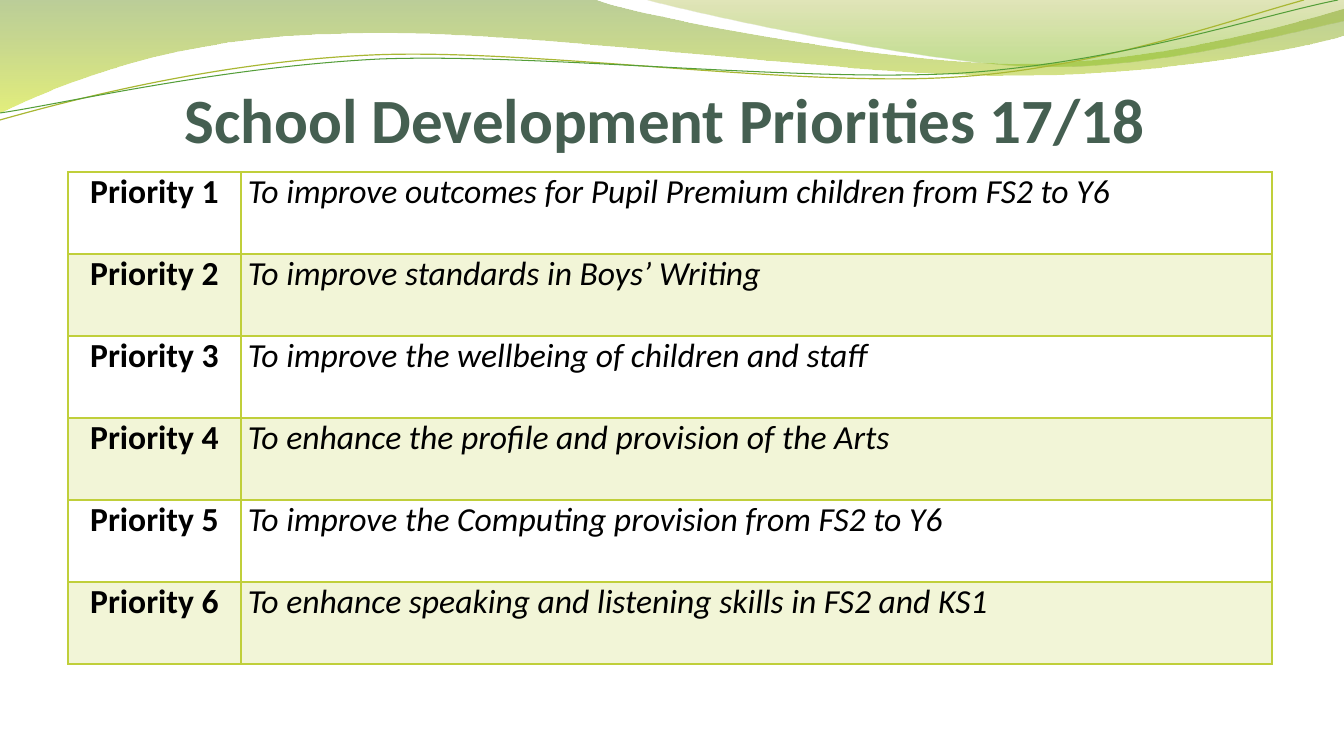
from lxml.etree import SubElement
from pptx import Presentation
from pptx.dml.color import RGBColor
from pptx.enum.text import MSO_ANCHOR, MSO_AUTO_SIZE, PP_ALIGN
from pptx.oxml import parse_xml
from pptx.oxml.ns import nsdecls, qn
from pptx.util import Pt

PX = 914400 / 100.8
COLORS = {
    "title": "455F51", "text": "000000", "lime": "C0CF3A",
    "wave_top": "69921C", "wave_bottom": "CCE10F",
    "crest_top": "9BAA1A", "crest_bottom": "81BA16",
    "olive_line": "A9B733", "green_line": "549E39",
}


def set_alpha(color_parent, percent):
    """Make every colour below an element partly transparent."""
    for color in color_parent.iter(qn("a:srgbClr")):
        SubElement(color, qn("a:alpha")).set("val", str(percent * 1000))


def add_curve(slide, start, segments, close):
    """Draw segments of one point (line) or three points (cubic curve)."""
    points = [(round(x * PX), round(y * PX))
              for x, y in [start, *(point for segment in segments for point in segment)]]
    builder = slide.shapes.build_freeform(*points[0])
    builder.add_line_segments(points[1:], close=close)
    shape = builder.convert_to_shape()
    shape.shadow.inherit = False
    # Merge each three line points into one cubic curve
    lines = iter(shape._element.spPr.findall(".//" + qn("a:lnTo")))
    for segment in segments:
        first, *others = [next(lines) for point in segment]
        if others:
            first.tag = qn("a:cubicBezTo")
        for other in others:
            first.append(other[0])
            other.getparent().remove(other)
    return shape


presentation = Presentation()
presentation.slide_width = round(1344 * PX)
presentation.slide_height = round(756 * PX)
slide = presentation.slides.add_slide(presentation.slide_layouts[5])

# Filled waves along the top: start, segments, (colour, alpha, position) stops
waves = [
    ((0, 0),
     [[(595, 0)],
      [(639, 17), (891, 64), (1019, 64)],
      [(1146, 64), (1287, 26), (1344, 9)],
      [(1344, 36)],
      [(1321, 44), (1168, 77), (1002, 76)],
      [(836, 76), (513, 28), (346, 34)],
      [(173, 36), (61, 84), (0, 113)]],
     [("wave_top", 45, 0), ("wave_bottom", 55, 1)]),
    ((645, 0),
     [[(684, 11), (916, 62), (1033, 66)],
      [(1149, 70), (1292, 32), (1344, 21)],
      [(1344, 0)]],
     [("crest_top", 30, 0), ("crest_bottom", 45, 0.8)]),
]
for start, segments, stops in waves:
    shape = add_curve(slide, start, segments, True)
    shape.line.fill.background()
    shape.fill.gradient()
    shape.fill.gradient_angle = 270
    stop_elements = shape._element.spPr.findall(".//" + qn("a:gs"))
    for stop, element, (color, alpha, position) in zip(
            shape.fill.gradient_stops, stop_elements, stops):
        stop.color.rgb = RGBColor.from_string(COLORS[color])
        stop.position = position
        set_alpha(element, alpha)

# Thin lines that follow the waves
wave_lines = [
    ("olive_line", 0.85, (0, 120),
     [[(64, 102), (212, 62), (372, 55)],
      [(531, 48), (795, 88), (957, 77)],
      [(1096, 68), (1221, 23), (1304, 0)]]),
    ("green_line", 0.75, (0, 113),
     [[(62, 104), (220, 67), (380, 59)],
      [(541, 53), (802, 83), (963, 73)],
      [(1123, 62), (1262, 15), (1338, 0)]]),
]
for color, width, start, segments in wave_lines:
    shape = add_curve(slide, start, segments, False)
    shape.fill.background()
    shape.line.color.rgb = RGBColor.from_string(COLORS[color])
    shape.line.width = Pt(width)

# Title
title = slide.shapes.title
title.left, title.top, title.width, title.height = (
    round(length * PX) for length in (67, 78, 1210, 78))
frame = title.text_frame
frame.auto_size = MSO_AUTO_SIZE.NONE
frame.word_wrap = True
frame.vertical_anchor = MSO_ANCHOR.BOTTOM
frame.margin_left = frame.margin_right = frame.margin_bottom = 0
frame.margin_top = round(5 * PX)
paragraph = frame.paragraphs[0]
paragraph.alignment = PP_ALIGN.CENTER
run = paragraph.add_run()
run.text = "School Development Priorities 17/18 "
run.font.name = "Calibri"
run.font.size = Pt(45)
run.font.bold = True
run.font.color.rgb = RGBColor.from_string(COLORS["title"])

# Table of priorities
priorities = [
    "To improve outcomes for Pupil Premium children from FS2 to Y6",
    "To improve standards in Boys’ Writing",
    "To improve the wellbeing of children and staff",
    "To enhance the profile and provision of the Arts",
    "To improve the Computing provision from FS2 to Y6",
    "To enhance speaking and listening skills in FS2 and KS1",
]
column_widths = (173, 1031)
row_height = 82
table = slide.shapes.add_table(
    len(priorities), len(column_widths), round(68 * PX), round(172 * PX),
    round(sum(column_widths) * PX), round(row_height * len(priorities) * PX)).table
table.first_row = False
table.horz_banding = False
for column, width in zip(table.columns, column_widths):
    column.width = round(width * PX)

for row_index, priority in enumerate(priorities):
    table.rows[row_index].height = round(row_height * PX)
    for column_index, text in enumerate((f"Priority {row_index + 1}", priority)):
        is_label = column_index == 0
        cell = table.cell(row_index, column_index)
        cell.margin_left = cell.margin_right = round(7 * PX)
        cell.margin_top = cell.margin_bottom = 0
        cell.vertical_anchor = MSO_ANCHOR.TOP
        paragraph = cell.text_frame.paragraphs[0]
        paragraph.alignment = PP_ALIGN.CENTER if is_label else PP_ALIGN.LEFT
        run = paragraph.add_run()
        run.text = text
        run.font.name = "Calibri"
        run.font.size = Pt(24)
        run.font.bold = is_label
        run.font.italic = not is_label
        run.font.color.rgb = RGBColor.from_string(COLORS["text"])

        # Every second row is tinted
        properties = cell._tc.get_or_add_tcPr()
        if row_index % 2:
            cell.fill.solid()
            cell.fill.fore_color.rgb = RGBColor.from_string(COLORS["lime"])
            set_alpha(properties, 20)
        else:
            cell.fill.background()

        # Borders, heavier below the first row
        for position, side in enumerate("LRTB"):
            heavy = (row_index, side) in ((0, "B"), (1, "T"))
            properties.insert(position, parse_xml(
                f'<a:ln{side} {nsdecls("a")} w="{Pt(2 if heavy else 1)}"><a:solidFill>'
                f'<a:srgbClr val="{COLORS["lime"]}"/></a:solidFill></a:ln{side}>'))

presentation.save("out.pptx")
